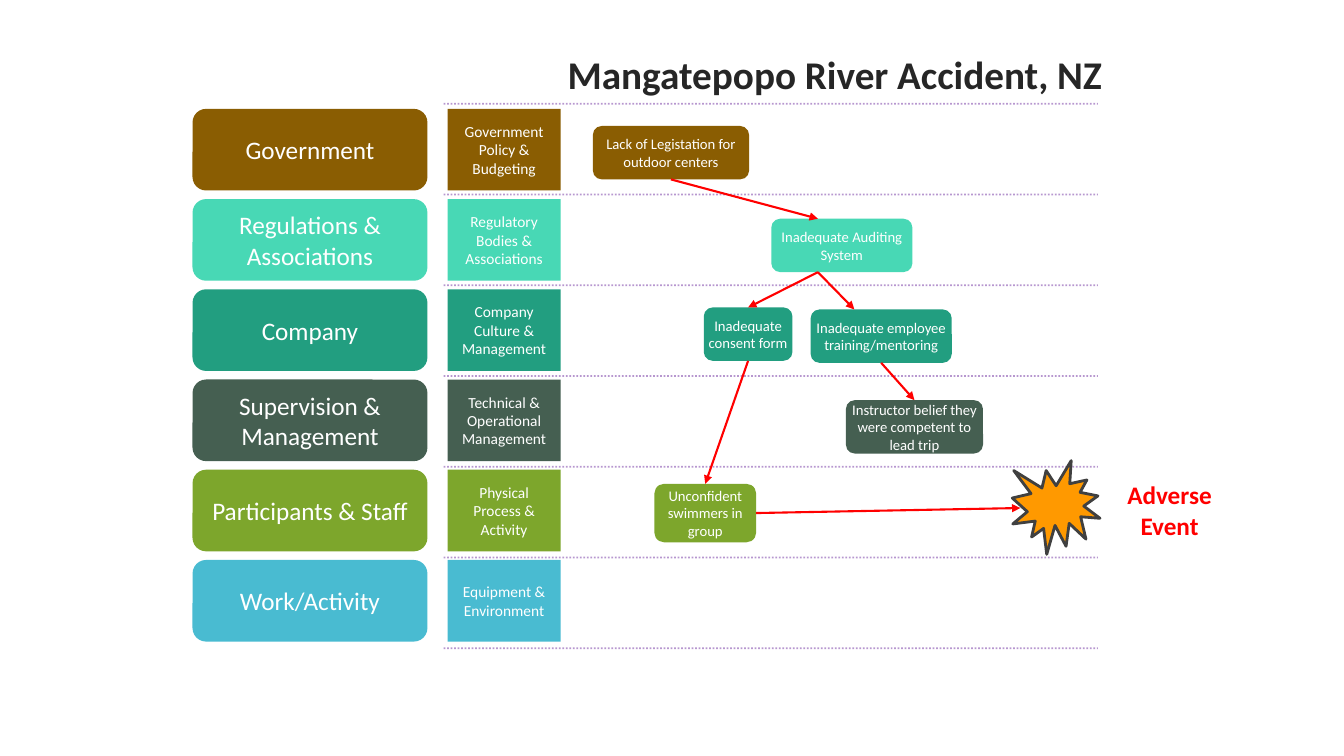
from dataclasses import dataclass

from lxml.etree import SubElement
from pptx import Presentation
from pptx.dml.color import RGBColor
from pptx.enum.dml import MSO_LINE
from pptx.enum.shapes import MSO_CONNECTOR, MSO_SHAPE
from pptx.enum.text import MSO_ANCHOR, MSO_AUTO_SIZE, PP_ALIGN
from pptx.oxml.ns import qn
from pptx.util import Inches, Pt


@dataclass(frozen=True)
class Theme:
    """Hold the colours, type sizes and font."""
    brown: str = "8A5D02"
    mint: str = "48D8B5"
    green: str = "229E80"
    slate: str = "455F51"
    olive: str = "7DA62C"
    blue: str = "49BBD1"
    white: str = "FFFFFF"
    red: str = "FF0000"
    orange: str = "FF9900"
    dark: str = "404040"
    ink: str = "262626"
    purple: str = "7030A0"
    font: str = "Calibri"
    title: float = 28
    level: float = 18
    topic: float = 11
    card: float = 10.5


LOOK = Theme()
PITCH = 0.895
LEVELS = [
    ("Government", "Government Policy & Budgeting", LOOK.brown),
    ("Regulations & Associations", "Regulatory Bodies & Associations", LOOK.mint),
    ("Company", "Company Culture & Management", LOOK.green),
    ("Supervision & Management", "Technical & Operational Management", LOOK.slate),
    ("Participants & Staff", "Physical Process & Activity", LOOK.olive),
    ("Work/Activity", "Equipment & Environment", LOOK.blue),
]
CARDS = {
    "law": ("Lack of Legistation for outdoor centers", LOOK.brown, (0.38, 0.25, 1.55, 0.53)),
    "audit": ("Inadequate Auditing System", LOOK.mint, (2.15, 1.17, 1.4, 0.53)),
    "consent": ("Inadequate consent form", LOOK.green, (1.48, 2.05, 0.88, 0.53)),
    "training": ("Inadequate employee training/mentoring", LOOK.green, (2.54, 2.07, 1.4, 0.53)),
    "belief": ("Instructor belief they were competent to lead trip", LOOK.slate,
               (2.89, 2.97, 1.36, 0.53)),
    "swimmers": ("Unconfident swimmers in group", LOOK.olive, (0.99, 3.8, 1.01, 0.58)),
}
LINKS = [
    ("law", 0.5, "audit", 0.33),
    ("audit", 0.33, "consent", 0.5),
    ("audit", 0.33, "training", 0.31),
    ("consent", 0.5, "swimmers", 0.5),
    ("training", 0.5, "belief", 0.5),
]


def paint(text):
    """Turn a hex string into a colour."""
    return RGBColor.from_string(text)


def write(shape, text, size, color, bold=False, align=PP_ALIGN.CENTER):
    """Put formatted text into a shape."""
    frame = shape.text_frame
    frame.text = text
    frame.word_wrap = True
    frame.auto_size = MSO_AUTO_SIZE.NONE
    line = frame.paragraphs[0]
    line.alignment = align
    font = line.runs[0].font
    font.name, font.size, font.bold = LOOK.font, Pt(size), bold
    font.color.rgb = paint(color)


def block(slide, kind, box, fill):
    """Draw a plain filled shape."""
    shape = slide.shapes.add_shape(kind, *map(Inches, box))
    shape.shadow.inherit = False
    shape.fill.solid()
    shape.fill.fore_color.rgb = paint(fill)
    shape.line.fill.background()
    return shape


def label(slide, kind, box, fill, text, size):
    """Draw a filled shape with centred white text."""
    shape = block(slide, kind, box, fill)
    shape.text_frame.vertical_anchor = MSO_ANCHOR.MIDDLE
    write(shape, text, size, LOOK.white)
    return shape


def stroke(slide, start, end, color, width):
    """Draw a straight line without a shadow."""
    line = slide.shapes.add_connector(
        MSO_CONNECTOR.STRAIGHT, *map(Inches, (*start, *end)))
    line.line.color.rgb = paint(color)
    line.line.width = Pt(width)
    SubElement(line._element.spPr, qn("a:effectLst"))
    return line


def arrow(slide, start, end):
    """Draw a red arrow."""
    line = stroke(slide, start, end, LOOK.red, 1.5)
    SubElement(line.line._get_or_add_ln(), qn("a:tailEnd"), type="triangle")


def heading(slide, box):
    """Place and format the title."""
    title = slide.shapes.title
    title.left, title.top, title.width, title.height = map(Inches, box)
    title.text_frame.vertical_anchor = MSO_ANCHOR.TOP
    write(title, "Mangatepopo River Accident, NZ", LOOK.title, LOOK.ink,
          True, PP_ALIGN.LEFT)


def ladder(slide, box):
    """Stack the level and topic blocks."""
    left, top, width, high = box
    for row, (level, topic, fill) in enumerate(LEVELS):
        y = top + row * PITCH
        label(slide, MSO_SHAPE.ROUNDED_RECTANGLE, (left, y, 2.33, high),
              fill, level, LOOK.level)
        label(slide, MSO_SHAPE.RECTANGLE, (left + width - 1.12, y, 1.12, high),
              fill, topic, LOOK.topic)


def rules(slide, box):
    """Draw the dotted lines between the levels."""
    left, top, width, high = box
    for row in range(len(LEVELS) + 1):
        y = top + row * high / len(LEVELS)
        line = stroke(slide, (left, y), (left + width, y), LOOK.purple, 1.25)
        line.line.dash_style = MSO_LINE.ROUND_DOT
        tint = line._element.spPr.find(".//" + qn("a:srgbClr"))
        SubElement(tint, qn("a:alpha"), val="50000")


def flow(slide, box):
    """Draw the causes, the arrows and the event."""
    left, top, width, high = box
    spots = {}
    for name, (text, fill, (x, y, w, h)) in CARDS.items():
        spots[name] = (left + x, top + y, w, h)
        card = label(slide, MSO_SHAPE.ROUNDED_RECTANGLE, spots[name],
                     fill, text, LOOK.card)
        card.text_frame.margin_left = card.text_frame.margin_right = 0
    for first, out, last, into in LINKS:
        x, y, w, h = spots[first]
        far, low, wide, _ = spots[last]
        arrow(slide, (x + w * out, y + h), (far + wide * into, low))
    x, y, w, h = spots["swimmers"]
    arrow(slide, (x + w, y + h / 2), (left + 4.62, top + 4.04))
    burst = block(slide, MSO_SHAPE.EXPLOSION1,
                  (left + 4.54, top + high - 0.93, 0.87, 0.93), LOOK.orange)
    burst.line.color.rgb = paint(LOOK.dark)
    burst.line.width = Pt(2)
    note = slide.shapes.add_textbox(
        *map(Inches, (left + width - 1.1, top + 3.71, 1.1, 0.71)))
    write(note, "Adverse Event", LOOK.level, LOOK.red, True)


def main():
    """Build and save the slide."""
    deck = Presentation()
    deck.slide_width, deck.slide_height = Inches(13.33), Inches(7.5)
    slide = deck.slides.add_slide(deck.slide_layouts[5])
    heading(slide, (5.53, 0.45, 5.9, 0.57))
    ladder(slide, (1.91, 1.08, 3.65, 0.81))
    rules(slide, (4.4, 1.03, 6.49, 5.4))
    flow(slide, (5.5, 1, 6.65, 4.5))
    deck.save("out.pptx")


if __name__ == "__main__":
    main()
